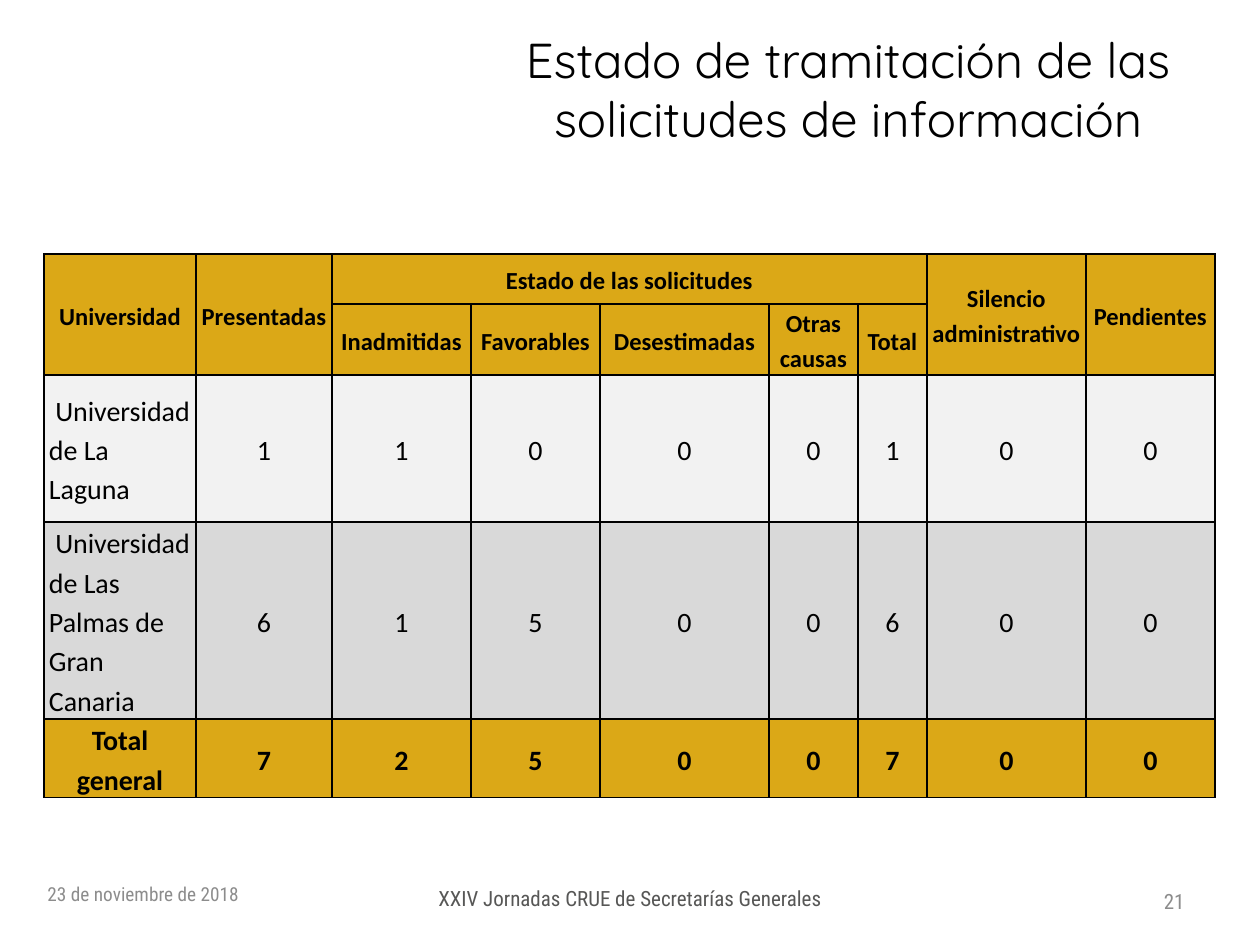
from typing import NamedTuple

from lxml import etree
from pptx import Presentation
from pptx.dml.color import RGBColor
from pptx.enum.text import MSO_ANCHOR, MSO_AUTO_SIZE, PP_ALIGN
from pptx.oxml.ns import qn
from pptx.util import Emu, Pt

LEFT, CENTER, RIGHT = PP_ALIGN.LEFT, PP_ALIGN.CENTER, PP_ALIGN.RIGHT
TOP, MIDDLE = MSO_ANCHOR.TOP, MSO_ANCHOR.MIDDLE
NO_AUTOFIT = MSO_AUTO_SIZE.NONE

EMU_PER_PX = 914400 / 126
BLACK, GREY, DARK_GREY = "000000", "8C8C8C", "575756"
GOLD, PALE, SILVER = "DBA817", "F2F2F2", "D9D9D9"


class Box(NamedTuple):
    left: int
    top: int
    width: int
    height: int


class TextStyle(NamedTuple):
    font: str
    size: int
    color: str
    align: PP_ALIGN = CENTER
    bold: bool = False
    spacing: float = 1.0


class Footer(NamedTuple):
    text: str
    box: Box
    style: TextStyle
    anchor: MSO_ANCHOR = MIDDLE


class Header(NamedTuple):
    text: str
    row: int
    col: int
    row_span: int = 1
    col_span: int = 1


class DataRow(NamedTuple):
    label: str
    values: list[int]
    fill: str
    label_style: TextStyle
    value_style: TextStyle


TITLE_STYLE = TextStyle("Quicksand", 28, BLACK)
HEADER_STYLE = TextStyle("Calibri", 14, BLACK, bold=True, spacing=1.15)
VALUE_STYLE = TextStyle("Calibri", 16, BLACK, spacing=1.15)
LABEL_STYLE = VALUE_STYLE._replace(align=LEFT)
TOTAL_STYLE = VALUE_STYLE._replace(bold=True)

TITLE = "Estado de tramitación de las solicitudes de información"
TITLE_BOX = Box(461, 37, 774, 157)
TABLE_ORIGIN = (44, 254)
COLUMN_WIDTHS = [152, 136, 139, 129, 169, 89, 69, 159, 129]
ROW_HEIGHTS = [50, 71, 147, 197, 78]

HEADERS = [
    Header("Universidad", 0, 0, row_span=2),
    Header("Presentadas", 0, 1, row_span=2),
    Header("Estado de las solicitudes", 0, 2, col_span=5),
    Header("Silencio administrativo", 0, 7, row_span=2),
    Header("Pendientes", 0, 8, row_span=2),
    Header("Inadmitidas", 1, 2),
    Header("Favorables", 1, 3),
    Header("Desestimadas", 1, 4),
    Header("Otras causas", 1, 5),
    Header("Total", 1, 6),
]
DATA_ROWS = [
    DataRow(" Universidad de La Laguna", [1, 1, 0, 0, 0, 1, 0, 0],
            PALE, LABEL_STYLE, VALUE_STYLE),
    DataRow(" Universidad de Las Palmas de Gran Canaria", [6, 1, 5, 0, 0, 6, 0, 0],
            SILVER, LABEL_STYLE, VALUE_STYLE),
    DataRow("Total general", [7, 2, 5, 0, 0, 7, 0, 0],
            GOLD, TOTAL_STYLE, TOTAL_STYLE),
]
FOOTERS = [
    Footer("23 de noviembre de 2018", Box(35, 869, 294, 50),
           TextStyle("Roboto Condensed", 11, GREY, LEFT)),
    Footer("XXIV Jornadas CRUE de Secretarías Generales", Box(382, 879, 496, 39),
           TextStyle("Roboto Condensed", 12, DARK_GREY), TOP),
    Footer("21", Box(903, 876, 294, 50),
           TextStyle("Roboto Condensed", 12, GREY, RIGHT)),
]


def px(length: int) -> Emu:
    return Emu(round(length * EMU_PER_PX))


def rgb(color: str) -> RGBColor:
    return RGBColor.from_string(color)


def set_all(target, values: dict) -> None:
    for attribute, value in values.items():
        setattr(target, attribute, value)


def write(frame, text: str, style: TextStyle) -> None:
    paragraph = frame.paragraphs[0]
    set_all(paragraph, {"alignment": style.align, "line_spacing": style.spacing})
    run = paragraph.add_run()
    run.text = text
    set_all(run.font, {"name": style.font, "size": Pt(style.size), "bold": style.bold})
    run.font.color.rgb = rgb(style.color)


def add_title(slide) -> None:
    title = slide.shapes.title
    set_all(title, {side: px(value) for side, value in TITLE_BOX._asdict().items()})
    # The bottom margin lifts the two lines towards the top of the slide
    set_all(title.text_frame, {"auto_size": NO_AUTOFIT, "word_wrap": True,
                               "vertical_anchor": MIDDLE,
                               "margin_top": 0, "margin_bottom": px(55)})
    write(title.text_frame, TITLE, TITLE_STYLE)


def add_footer(slide, footer: Footer) -> None:
    frame = slide.shapes.add_textbox(*map(px, footer.box)).text_frame
    set_all(frame, {"word_wrap": True, "vertical_anchor": footer.anchor})
    write(frame, footer.text, footer.style)


def format_cell(cell, fill: str) -> None:
    set_all(cell, {"margin_left": px(5), "margin_right": px(5), "margin_top": 0,
                   "margin_bottom": 0, "vertical_anchor": MIDDLE})
    # Borders come before the fill in the cell properties
    properties = cell._tc.get_or_add_tcPr()
    for side in ("lnL", "lnR", "lnT", "lnB"):
        line = etree.SubElement(properties, qn(f"a:{side}"), w=str(Pt(1)))
        solid = etree.SubElement(line, qn("a:solidFill"))
        etree.SubElement(solid, qn("a:srgbClr"), val=BLACK)
    cell.fill.solid()
    cell.fill.fore_color.rgb = rgb(fill)


def add_requests_table(slide) -> None:
    box = Box(*TABLE_ORIGIN, sum(COLUMN_WIDTHS), sum(ROW_HEIGHTS))
    table = slide.shapes.add_table(
        len(ROW_HEIGHTS), len(COLUMN_WIDTHS), *map(px, box)).table
    set_all(table, {"first_row": False, "horz_banding": False})
    for column, width in zip(table.columns, COLUMN_WIDTHS):
        column.width = px(width)
    for row, height in zip(table.rows, ROW_HEIGHTS):
        row.height = px(height)

    # Fills and borders
    row_fills = [GOLD, GOLD] + [entry.fill for entry in DATA_ROWS]
    for row, fill in zip(table.rows, row_fills):
        for cell in row.cells:
            format_cell(cell, fill)

    # Two-level header
    for header in HEADERS:
        cell = table.cell(header.row, header.col)
        if header.row_span * header.col_span > 1:
            cell.merge(table.cell(header.row + header.row_span - 1,
                                  header.col + header.col_span - 1))
        write(cell.text_frame, header.text, HEADER_STYLE)

    # Universities and overall total
    for row_index, entry in enumerate(DATA_ROWS, start=2):
        write(table.cell(row_index, 0).text_frame, entry.label, entry.label_style)
        for col_index, value in enumerate(entry.values, start=1):
            write(table.cell(row_index, col_index).text_frame,
                  str(value), entry.value_style)


def main() -> None:
    presentation = Presentation()
    set_all(presentation, {"slide_width": px(1260), "slide_height": px(945)})
    title_only = presentation.slide_layouts[5]
    slide = presentation.slides.add_slide(title_only)
    add_title(slide)
    add_requests_table(slide)
    for footer in FOOTERS:
        add_footer(slide, footer)
    presentation.save("out.pptx")


if __name__ == "__main__":
    main()
